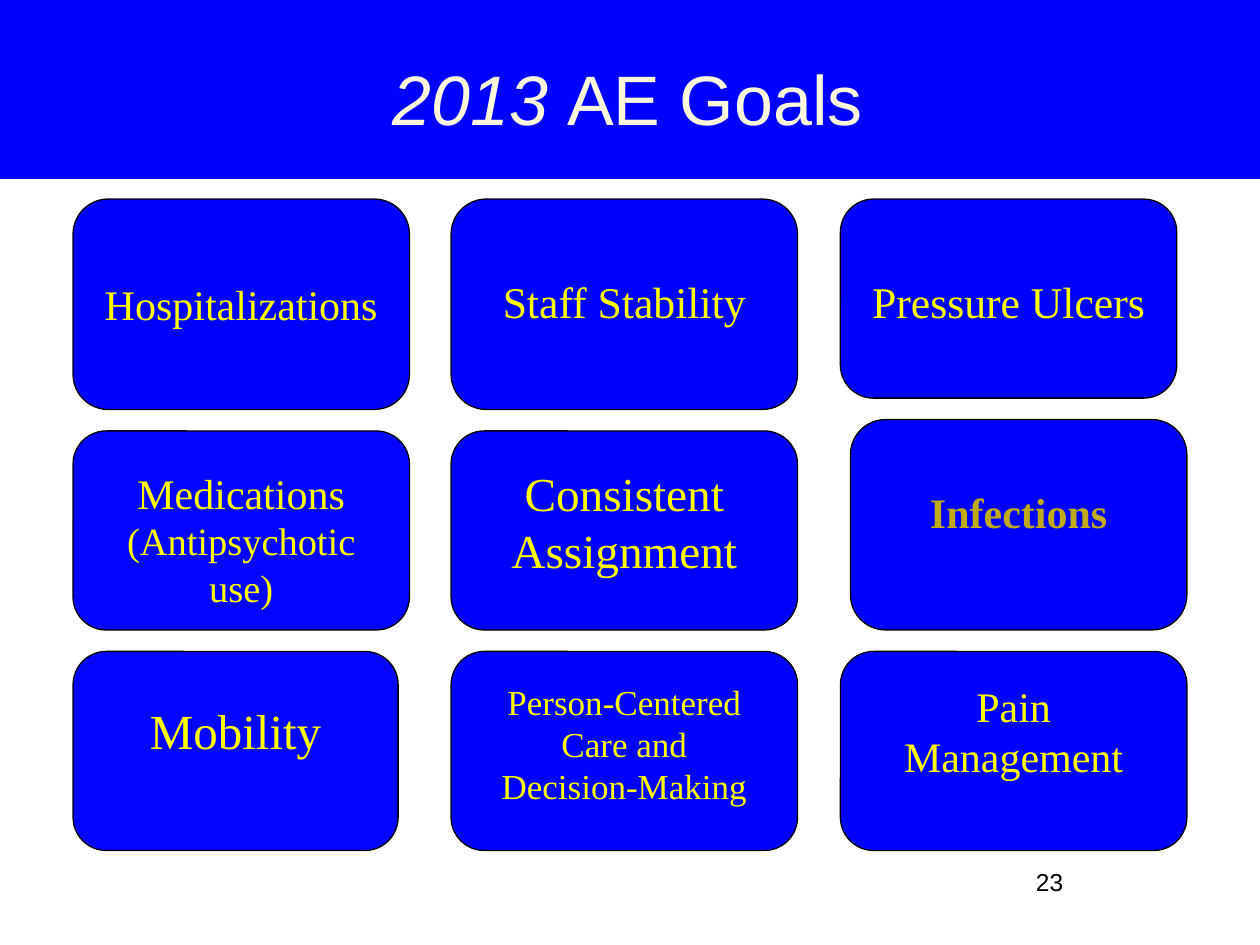
from dataclasses import dataclass

from lxml import etree
from pptx import Presentation
from pptx.dml.color import RGBColor
from pptx.enum.shapes import MSO_SHAPE
from pptx.enum.text import MSO_ANCHOR, PP_ALIGN
from pptx.oxml.ns import qn
from pptx.util import Inches, Pt

ROUNDED = MSO_SHAPE.FLOWCHART_ALTERNATE_PROCESS
RECTANGLE = MSO_SHAPE.RECTANGLE
CENTER = PP_ALIGN.CENTER
TOP = MSO_ANCHOR.TOP
MIDDLE = MSO_ANCHOR.MIDDLE


@dataclass(frozen=True)
class Theme:
    blue: RGBColor = RGBColor(0x00, 0x00, 0xFF)
    yellow: RGBColor = RGBColor(0xFF, 0xFF, 0x00)
    gold: RGBColor = RGBColor(0xBF, 0xAA, 0x17)
    cream: RGBColor = RGBColor(0xFB, 0xF7, 0xDB)
    black: RGBColor = RGBColor(0x00, 0x00, 0x00)
    heading_font: str = "Arial"
    goal_font: str = "Times New Roman"
    title_size: int = 40
    number_size: int = 14
    outline: float = 0.75
    title_spacing: float = 1.2


@dataclass(frozen=True)
class Goal:
    """One goal box: its place, its (text, size) lines and the room above them."""
    left: float
    top: float
    width: float
    height: float
    inset: float
    lines: tuple
    opacity: int = 100
    highlighted: bool = False


COLUMNS = (0.58, 3.58, 6.67)
ROWS = (1.58, 3.42, 5.17)

GOALS = (
    Goal(COLUMNS[0], ROWS[0], 2.67, 1.67, 0.55, (("Hospitalizations", 24),)),
    Goal(COLUMNS[1], ROWS[0], 2.75, 1.67, 0.52, (("Staff Stability", 25),)),
    Goal(COLUMNS[2], ROWS[0], 2.67, 1.58, 0.52, (("Pressure Ulcers", 25),)),
    Goal(COLUMNS[0], ROWS[1], 2.67, 1.58, 0.21,
         (("Medications", 24), ("(Antipsychotic use)", 22)), opacity=98),
    Goal(COLUMNS[1], ROWS[1], 2.75, 1.58, 0.19,
         (("Consistent", 27), ("Assignment", 27))),
    Goal(6.75, 3.33, 2.67, 1.67, 0.45, (("Infections", 24),), highlighted=True),
    Goal(COLUMNS[0], ROWS[2], 2.58, 1.58, 0.31, (("Mobility", 28),), opacity=98),
    Goal(COLUMNS[1], ROWS[2], 2.75, 1.58, 0.15,
         (("Person-Centered", 20), ("Care and", 20), ("Decision-Making", 20))),
    Goal(COLUMNS[2], ROWS[2], 2.75, 1.58, 0.15, (("Pain Management", 24),)),
)


class SlideBuilder:
    def __init__(self, slide, theme):
        self.slide = slide
        self.theme = theme

    def style_span(self, span, font, size, color, bold=False, italic=False):
        span.font.name = font
        span.font.size = Pt(size)
        span.font.color.rgb = color
        span.font.bold = bold
        span.font.italic = italic

    def add_box(self, kind, left, top, width, height):
        """Add a flat blue shape without an outline."""
        box = self.slide.shapes.add_shape(
            kind, Inches(left), Inches(top), Inches(width), Inches(height))
        box.shadow.inherit = False
        box.fill.solid()
        box.fill.fore_color.rgb = self.theme.blue
        box.line.fill.background()
        box.text_frame.word_wrap = True
        return box

    def set_opacity(self, box, percent):
        color = box.fill._xPr.find(qn("a:solidFill"))[0]
        etree.SubElement(color, qn("a:alpha")).set("val", str(percent * 1000))

    def add_title(self, parts):
        """Add the title band; parts are (text, italic) pairs."""
        band = self.add_box(RECTANGLE, 0, 0, 10, 1.42)
        frame = band.text_frame
        frame.vertical_anchor = MIDDLE
        frame.margin_left = frame.margin_top = frame.margin_bottom = Inches(0.06)
        frame.margin_right = Inches(0.1)
        para = frame.paragraphs[0]
        para.alignment = CENTER
        para.line_spacing = self.theme.title_spacing
        for text, italic in parts:
            span = para.add_run()
            span.text = text
            self.style_span(span, self.theme.heading_font, self.theme.title_size,
                            self.theme.cream, italic=italic)

    def add_goal(self, goal):
        box = self.add_box(ROUNDED, goal.left, goal.top, goal.width, goal.height)
        box.line.color.rgb = self.theme.black
        box.line.width = Pt(self.theme.outline)
        if goal.opacity < 100:
            self.set_opacity(box, goal.opacity)
        frame = box.text_frame
        frame.vertical_anchor = TOP
        frame.margin_top = Inches(goal.inset)
        frame.text = "\n".join(text for text, _ in goal.lines)
        color = self.theme.gold if goal.highlighted else self.theme.yellow
        for para, (_, size) in zip(frame.paragraphs, goal.lines):
            para.alignment = CENTER
            self.style_span(para.runs[0], self.theme.goal_font, size, color,
                            bold=goal.highlighted)

    def add_slide_number(self, text):
        box = self.slide.shapes.add_textbox(
            Inches(8.17), Inches(6.83), Inches(0.32), Inches(0.32))
        frame = box.text_frame
        frame.word_wrap = False
        frame.margin_left = frame.margin_right = 0
        frame.text = text
        para = frame.paragraphs[0]
        para.alignment = CENTER
        self.style_span(para.runs[0], self.theme.heading_font,
                        self.theme.number_size, self.theme.black)


def main():
    deck = Presentation()
    deck.slide_width = Inches(10)
    deck.slide_height = Inches(7.5)
    page = deck.slides.add_slide(deck.slide_layouts[6])
    builder = SlideBuilder(page, Theme())
    builder.add_title((("2013 ", True), ("AE Goals", False)))
    for goal in GOALS:
        builder.add_goal(goal)
    builder.add_slide_number("23")
    deck.save("out.pptx")


if __name__ == "__main__":
    main()
